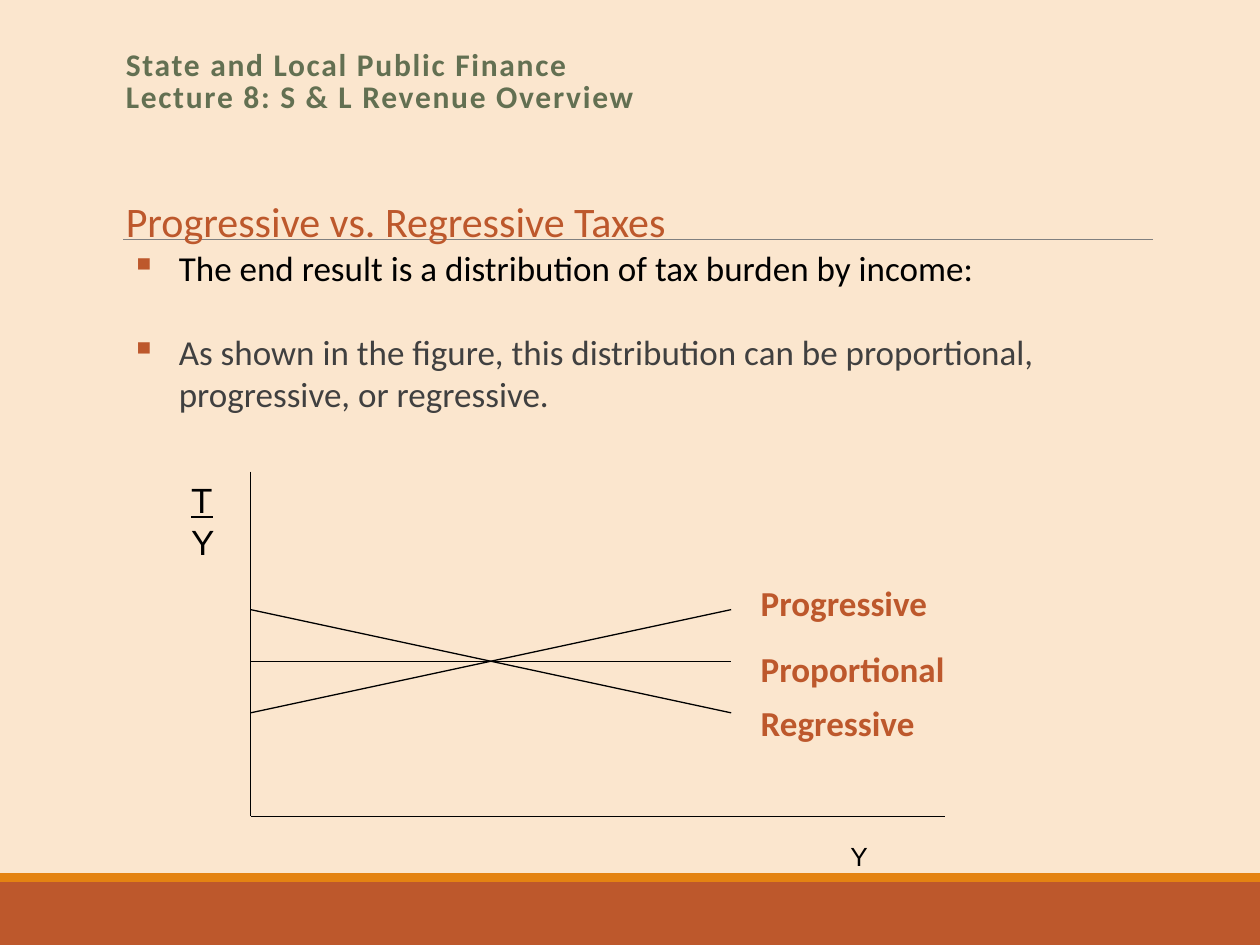
from lxml.etree import SubElement
from pptx import Presentation
from pptx.dml.color import RGBColor
from pptx.enum.shapes import MSO_CONNECTOR as Connector, MSO_SHAPE as Shape
from pptx.enum.text import MSO_ANCHOR as Anchor, MSO_AUTO_SIZE as AutoSize
from pptx.oxml.ns import qn
from pptx.util import Pt

COLORS = {
    "paper": "FBE6CE", "rust": "BD582C", "orange": "E48312", "rule": "808080",
    "green": "637052", "black": "000000", "gray": "404040",
}
HEADING = {"name": "Calibri", "size": Pt(18), "bold": True}
TITLE = {"name": "Calibri", "size": Pt(24)}
BODY = {"name": "Calibri", "size": Pt(20)}
LABEL = {"name": "Calibri", "size": Pt(20), "bold": True}
AXIS = {"name": "Arial", "size": Pt(15)}
RATIO = {"name": "Arial", "size": Pt(20)}


def rgb(name):
    """Return the named colour."""
    return RGBColor.from_string(COLORS[name])


def apply(target, values):
    """Set each attribute of the target from a dict."""
    for name, value in values.items():
        setattr(target, name, value)


def add_bar(shapes, box, color):
    """Add a plain filled rectangle."""
    bar = shapes.add_shape(Shape.RECTANGLE, *map(Pt, box))
    bar.shadow.inherit = False
    bar.fill.solid()
    bar.fill.fore_color.rgb = rgb(color)
    bar.line.fill.background()


def add_line(shapes, start, end, color="black", width=0.75):
    """Add a straight line without a shadow."""
    line = shapes.add_connector(Connector.STRAIGHT, *map(Pt, (*start, *end)))
    line.line.color.rgb = rgb(color)
    line.line.width = Pt(width)
    SubElement(line._element.spPr, qn("a:effectLst"))


def add_text(shapes, box, lines, style, color="black", **frame_values):
    """Add a text box with one paragraph a line and return its paragraphs."""
    frame = shapes.add_textbox(*map(Pt, box)).text_frame
    apply(frame, {"word_wrap": True, **frame_values})
    for index, line in enumerate(lines):
        para = frame.add_paragraph() if index else frame.paragraphs[0]
        para.text = line
        for span in para.runs:
            apply(span.font, style)
            span.font.color.rgb = rgb(color)
    return frame.paragraphs


def add_bullet(para, color, indent):
    """Give the paragraph a square bullet and a hanging indent."""
    props = para._p.get_or_add_pPr()
    props.set("marL", str(Pt(indent)))
    props.set("indent", str(-Pt(indent)))
    bullet_color = SubElement(props, qn("a:buClr"))
    SubElement(bullet_color, qn("a:srgbClr"), val=COLORS[color])
    SubElement(props, qn("a:buChar"), char="▪")


def add_backdrop(page, width, height):
    """Paint the background, the footer bars and the title rule."""
    page.background.fill.solid()
    page.background.fill.fore_color.rgb = rgb("paper")
    add_bar(page.shapes, (0, height - 36, width, 36), "rust")
    add_bar(page.shapes, (0, height - 41, width, 5), "orange")
    add_line(page.shapes, (70.5, 136.8), (658.8, 136.8), "rule", 0.5)


def add_header(page, left, top):
    """Add the course heading and the slide title below it."""
    heading = "State and Local Public Finance\vLecture 8: S & L Revenue Overview"
    para = add_text(page.shapes, (left, top, 594, 46.8), [heading], HEADING, "green",
                    vertical_anchor=Anchor.MIDDLE)[0]
    para.line_spacing = 0.85
    for span in para.runs:
        span.font._element.set("spc", "100")
    add_text(page.shapes, (left, top + 84.2, 334, 36), ["Progressive vs. Regressive Taxes"],
             TITLE, "rust", word_wrap=False, auto_size=AutoSize.SHAPE_TO_FIT_TEXT)


def add_points(page, box):
    """Add the two bullet points."""
    points = add_text(page.shapes, box, [
        "The end result is a distribution of tax burden by income:",
        "As shown in the figure, this distribution can be proportional, "
        "progressive, or regressive.",
    ], BODY, auto_size=AutoSize.SHAPE_TO_FIT_TEXT)
    points[1].space_before = Pt(24)
    points[1].runs[0].font.color.rgb = rgb("gray")
    for para in points:
        add_bullet(para, "rust", 27.4)


def add_figure(page, left, top, width, height):
    """Draw the tax burden figure, with its axes along the box's left and bottom."""
    shapes = page.shapes.add_group_shape().shapes
    bottom = top + height
    add_line(shapes, (left, top), (left, bottom))
    add_line(shapes, (left, bottom), (left + width, bottom))
    add_text(shapes, (left + width - 61.2, bottom + 10, 61.2, 39.6), ["Y"], AXIS)
    ratio = add_text(shapes, (left - 41, top - 1.6, 41, 59), ["T", "Y"], RATIO,
                     vertical_anchor=Anchor.MIDDLE)
    ratio[0].runs[0].font.underline = True

    middle, run = top + height * 0.55, 274.6
    curves = [("Progressive", 29.5, -49), ("Proportional", 0, -11.5), ("Regressive", -29.5, 19.4)]
    for name, rise, label_offset in curves:
        add_line(shapes, (left, middle + rise), (left + run, middle - rise))
        add_text(shapes, (left + run + 9.8, middle + label_offset, 152.6, 29.5),
                 [name], LABEL, "rust")


def main():
    """Build the slide and save it."""
    deck = Presentation()
    apply(deck, {"slide_width": Pt(720), "slide_height": Pt(540)})
    page = deck.slides.add_slide(deck.slide_layouts[6])
    add_backdrop(page, 720, 540)
    add_header(page, 64.8, 23.8)
    add_points(page, (67.7, 137.5, 627.8, 104.4))
    add_figure(page, 143.2, 269.5, 396.8, 197)
    deck.save("out.pptx")


if __name__ == "__main__":
    main()
